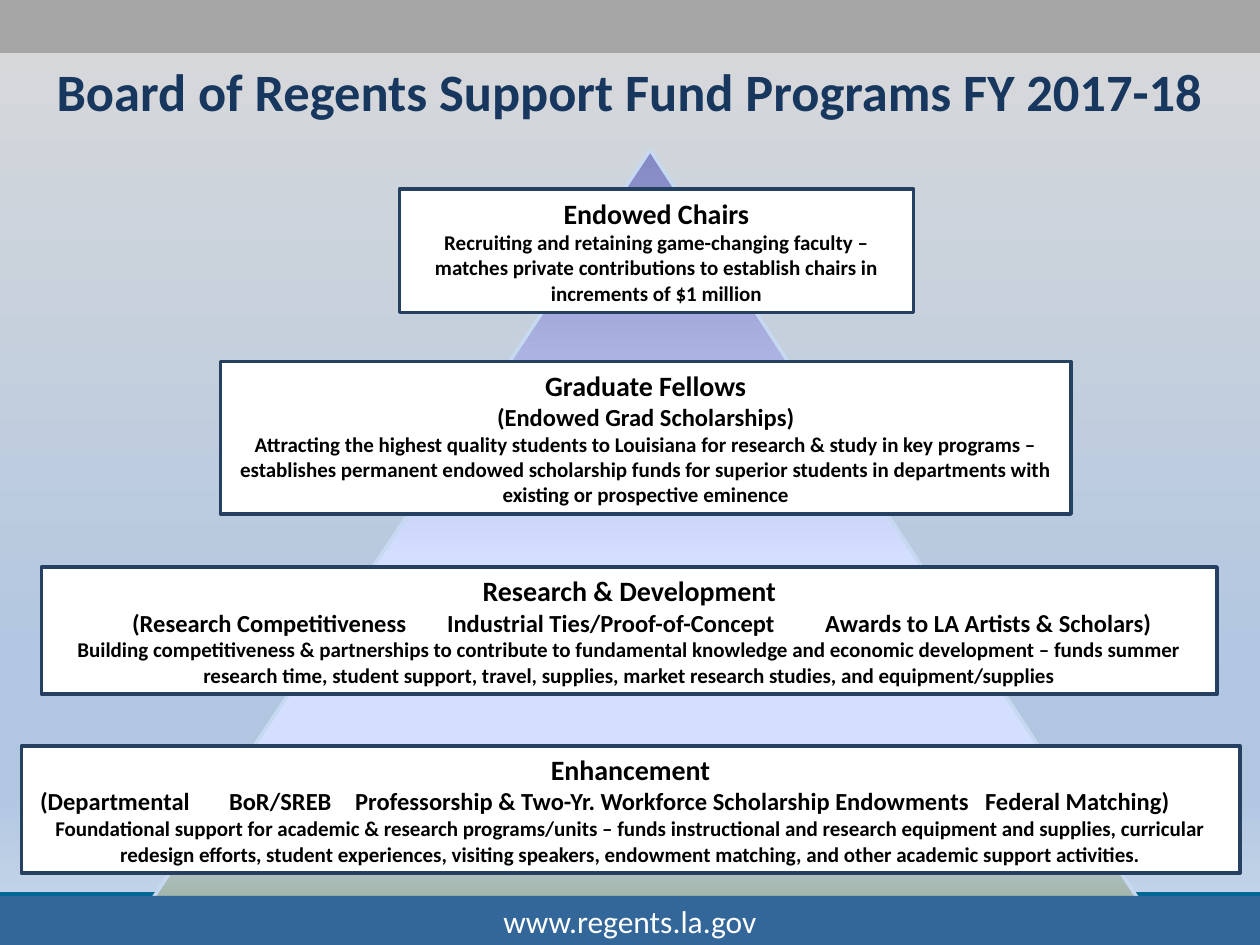
from lxml.etree import SubElement
from pptx import Presentation
from pptx.dml.color import RGBColor
from pptx.enum.shapes import MSO_SHAPE as Preset
from pptx.enum.text import MSO_ANCHOR as Anchor, MSO_AUTO_SIZE as AutoSize, PP_ALIGN as Align
from pptx.oxml.ns import qn
from pptx.util import Inches, Pt

FONT = "Calibri"
NAVY = RGBColor(0x17, 0x37, 0x5E)
BORDER = RGBColor(0x25, 0x40, 0x61)
TEAL = RGBColor(0x00, 0x67, 0x95)
FOOTER_BLUE = RGBColor(0x33, 0x66, 0x99)
GRAY = RGBColor(0xA6, 0xA6, 0xA6)
PALE_BLUE = RGBColor(0xC6, 0xD9, 0xF1)
WHITE = RGBColor(0xFF, 0xFF, 0xFF)
BLACK = RGBColor(0x00, 0x00, 0x00)
SKY = [(0, RGBColor(0xD9, 0xD9, 0xD9)), (74, RGBColor(0xB0, 0xC6, 0xE1)),
       (83, RGBColor(0xB0, 0xC6, 0xE1)), (100, RGBColor(0xCA, 0xD9, 0xEB))]
PYRAMID = [(0, RGBColor(0x84, 0x88, 0xC4)), (53, RGBColor(0xD4, 0xDE, 0xFF)),
           (83, RGBColor(0xD4, 0xDE, 0xFF)), (100, RGBColor(0x96, 0xAB, 0x94))]

TIERS = [
    ((0.17, 5.92, 9.67, 1.01), "Enhancement",
     ["(Departmental", "BoR/SREB",
      "Professorship & Two-Yr. Workforce Scholarship Endowments", "Federal Matching)"],
     [0.05, 1.59, 2.75, 7.93],
     "Foundational support for academic & research programs/units – funds instructional and "
     "research equipment and supplies, curricular redesign efforts, student experiences, "
     "visiting speakers, endowment matching, and other academic support activities."),
    ((0.33, 4.5, 9.33, 1.01), "Research & Development",
     ["(Research Competitiveness", "Industrial Ties/Proof-of-Concept",
      "Awards to LA Artists & Scholars)"],
     [0.62, 3.06, 5.92],
     "Building competitiveness & partnerships to contribute to fundamental knowledge and "
     "economic development – funds summer research time, student support, travel, supplies, "
     "market research studies, and equipment/supplies"),
    ((1.75, 2.87, 6.75, 1.21), "Graduate Fellows", ["(Endowed Grad Scholarships)"], [],
     "Attracting the highest quality students to Louisiana for research & study in key "
     "programs – establishes permanent endowed scholarship funds for superior students in "
     "departments with existing or prospective eminence"),
    ((3.17, 1.5, 4.08, 0.98), "Endowed Chairs", [], [],
     "Recruiting and retaining game-changing faculty – matches private contributions to "
     "establish chairs in increments of $1 million"),
]


def set_gradient(fill, element, stops):
    """Give a fill a top-to-bottom gradient with the stops listed."""
    fill.gradient()
    fill.gradient_angle = 270
    stop_list = next(element.iter(qn("a:gsLst")))
    for stop in list(stop_list):
        stop_list.remove(stop)
    for position, color in stops:
        stop = SubElement(stop_list, qn("a:gs"), pos=str(position * 1000))
        SubElement(stop, qn("a:srgbClr"), val=str(color))


def set_columns(paragraph, positions):
    """Start the parts of a tabbed line at the positions given in inches."""
    paragraph.alignment = Align.LEFT
    properties = paragraph._p.get_or_add_pPr()
    properties.set("marL", str(Inches(positions[0])))
    properties.set("indent", "0")
    tabs = SubElement(properties, qn("a:tabLst"))
    for position in positions[1:]:
        SubElement(tabs, qn("a:tab"), pos=str(Inches(position)), algn="l")


def format_paragraph(paragraph, size, color, bold=False):
    """Centre a paragraph and style its runs."""
    paragraph.alignment = Align.CENTER
    for run in paragraph.runs:
        run.font.name = FONT
        run.font.size = Pt(size)
        run.font.bold = bold
        run.font.color.rgb = color


def add_block(slide, box, color=None, line=None, preset=Preset.RECTANGLE):
    """Add a flat shape with an optional fill and 2 pt outline."""
    shape = slide.shapes.add_shape(preset, *map(Inches, box))
    shape.shadow.inherit = False
    if color is not None:
        shape.fill.solid()
        shape.fill.fore_color.rgb = color
    if line is None:
        shape.line.fill.background()
    else:
        shape.line.color.rgb = line
        shape.line.width = Pt(2)
    return shape


def add_title(slide, box):
    """Place and format the title placeholder."""
    title = slide.shapes.title
    title.left, title.top, title.width, title.height = map(Inches, box)
    frame = title.text_frame
    frame.text = "Board of Regents Support Fund Programs FY 2017-18"
    frame.auto_size = AutoSize.NONE
    frame.vertical_anchor = Anchor.TOP
    format_paragraph(frame.paragraphs[0], 30, NAVY, bold=True)


def add_pyramid(slide, box):
    """Add the gradient triangle behind the tiers."""
    pyramid = add_block(slide, box, line=PALE_BLUE, preset=Preset.ISOSCELES_TRIANGLE)
    pyramid.adjustments[0] = 0.505
    set_gradient(pyramid.fill, pyramid._element, PYRAMID)


def add_tier(slide, box, heading, programs, columns, description):
    """Add one tier box with its heading, programs and description."""
    frame = add_block(slide, box, WHITE, BORDER).text_frame
    frame.word_wrap = True
    lines = [(heading, 16), ("\t".join(programs), 14), (description, 12)]
    lines = [line for line in lines if line[0]]
    frame.text = "\n".join(text for text, _ in lines)
    for paragraph, (_, size) in zip(frame.paragraphs, lines):
        format_paragraph(paragraph, size, BLACK, bold=True)
    if columns:
        set_columns(frame.paragraphs[1], columns)


def add_footer(slide, box):
    """Add the footer bar with the web address."""
    frame = add_block(slide, box, FOOTER_BLUE).text_frame
    frame.text = "www.regents.la.gov"
    format_paragraph(frame.paragraphs[0], 18, WHITE)


def main():
    """Build and save the slide."""
    presentation = Presentation()
    presentation.slide_width, presentation.slide_height = Inches(10), Inches(7.5)
    slide = presentation.slides.add_slide(presentation.slide_layouts[5])
    set_gradient(slide.background.fill, slide._element, SKY)
    add_block(slide, (0, 7.08, 10, 0.42), TEAL)
    add_pyramid(slide, (1.08, 1.19, 8.08, 6.14))
    for tier in TIERS:
        add_tier(slide, *tier)
    add_title(slide, (0, 0.42, 10, 0.61))
    add_footer(slide, (0, 7.11, 10, 0.4))
    add_block(slide, (0, 0, 10, 0.42), GRAY)
    presentation.save("out.pptx")


if __name__ == "__main__":
    main()
